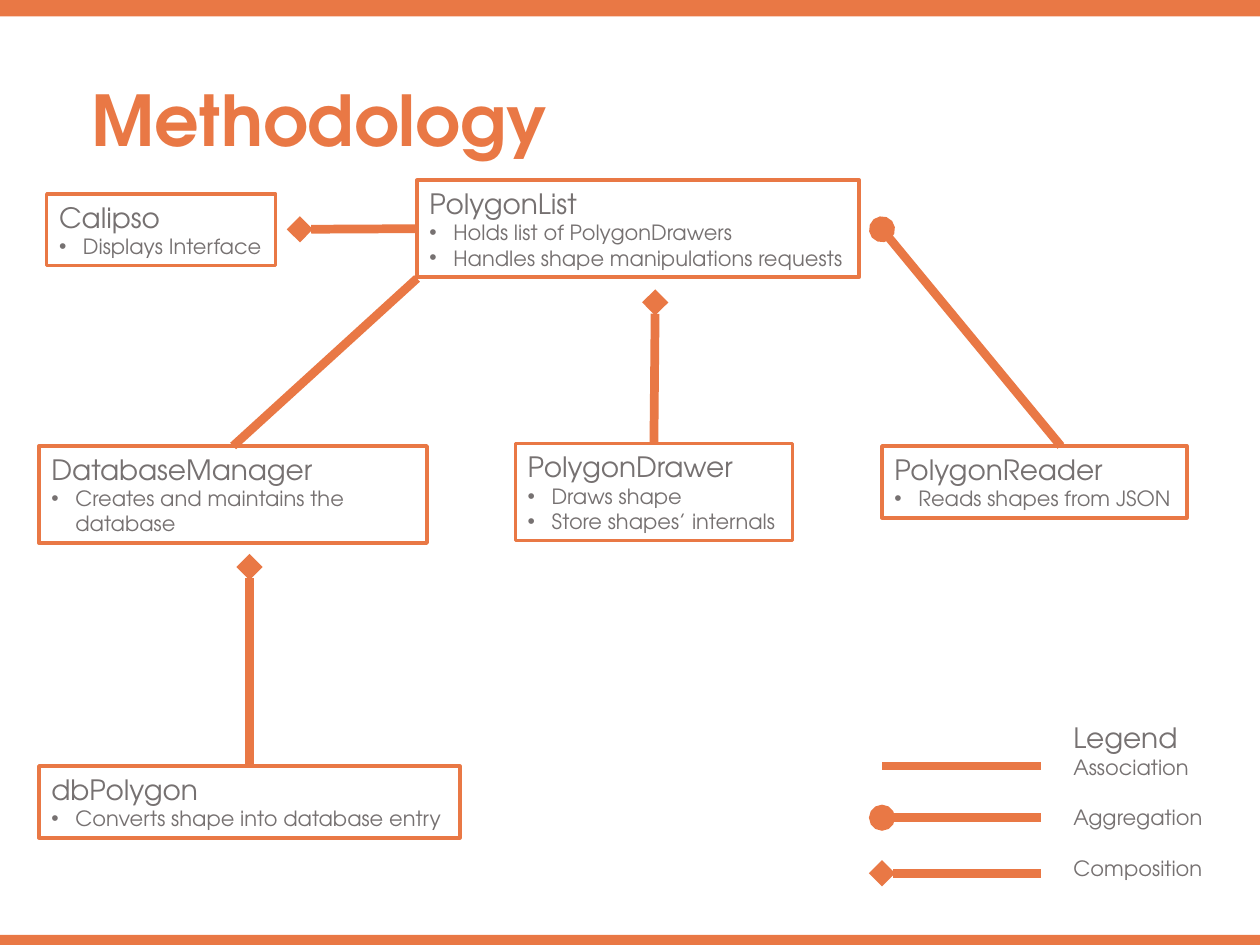
from lxml.etree import SubElement as Sub
from pptx import Presentation as Deck
from pptx.dml.color import RGBColor as Color
from pptx.enum.shapes import MSO_CONNECTOR as Link, MSO_SHAPE as Form
from pptx.enum.text import MSO_ANCHOR as Anchor, MSO_AUTO_SIZE as Auto, PP_ALIGN as Align
from pptx.oxml.ns import qn
from pptx.util import Inches, Pt

ORANGE = Color(0xE9, 0x78, 0x45)
GRAY = Color(0x76, 0x71, 0x71)
FONT = "TeX Gyre Adventor"
COLS, ROWS = 100, 75
TOP, LEFT = 0, 1


class Page:
    """Draws styled elements on one slide, placed by columns and rows of its grid."""

    def __init__(self, deck):
        self.cell = deck.slide_width / COLS
        self.slide = deck.slides.add_slide(deck.slide_layouts[5])
        self.shapes = self.slide.shapes

    def grid(self, *spots):
        return [round(spot * self.cell) for spot in spots]

    def style(self, para, size, color=GRAY, bold=False):
        for run in para.runs:
            font = run.font
            font.name, font.size, font.bold = FONT, Pt(size), bold
            font.color.rgb = color

    def title(self, text, *area):
        head = self.shapes.title
        head.left, head.top, head.width, head.height = self.grid(*area)
        frame = head.text_frame
        frame.text = text
        frame.vertical_anchor = Anchor.TOP
        para = frame.paragraphs[0]
        para.alignment = Align.LEFT
        para.line_spacing = 0.9
        self.style(para, 40, ORANGE, True)

    def bar(self, row, high):
        bar = self.shapes.add_shape(Form.RECTANGLE, *self.grid(0, row, COLS, high))
        bar.shadow.inherit = False
        bar.fill.solid()
        bar.fill.fore_color.rgb = ORANGE
        bar.line.fill.background()

    def text(self, name, items, area, wrap=False):
        box = self.shapes.add_textbox(*self.grid(*area))
        frame = box.text_frame
        frame.word_wrap = wrap
        frame.auto_size = Auto.SHAPE_TO_FIT_TEXT
        frame.text = name
        self.style(frame.paragraphs[0], 16)
        for item in items:
            para = frame.add_paragraph()
            para.text = item
            self.style(para, 12)
        return box

    def node(self, name, items, area, wrap=False, width=2):
        box = self.text(name, items, area, wrap)
        box.line.color.rgb = ORANGE
        box.line.width = Pt(width)
        for para in box.text_frame.paragraphs[1:]:
            props = para._p.get_or_add_pPr()
            props.set("marL", str(Inches(0.19)))
            props.set("indent", str(-Inches(0.19)))
            Sub(props, qn("a:buFont")).set("typeface", "Arial")
            Sub(props, qn("a:buChar")).set("char", "•")
        return box

    def legend(self, name, items, area):
        box = self.text(name, items, area)
        for para in box.text_frame.paragraphs[2:]:
            para.space_before = Pt(14.5)

    def line(self, start, stop, head=None, tail=None):
        line = self.shapes.add_connector(Link.STRAIGHT, *self.grid(*start, *stop))
        line.line.color.rgb = ORANGE
        line.line.width = Pt(5)
        props = line.element.spPr
        for tag, mark in (("a:headEnd", head), ("a:tailEnd", tail)):
            if mark:
                Sub(props.find(qn("a:ln")), qn(tag)).set("type", mark)
        Sub(props, qn("a:effectLst"))
        return line


def main():
    deck = Deck()
    deck.slide_width, deck.slide_height = Inches(10), Inches(7.5)
    page = Page(deck)
    page.bar(0, 1.3)
    page.bar(ROWS - 0.8, 0.8)
    page.title("Methodology", 6.3, 6.3, 87.3, 7.7)

    drawer = page.node("PolygonDrawer", ["Draws shape", "Store shapes’ internals"],
                       (40.9, 35.2, 22, 7.7))
    page.node("PolygonReader", ["Reads shapes from JSON"], (70, 35.4, 24.2, 5.7))
    entry = page.node("dbPolygon", ["Converts shape into database entry"],
                      (3.1, 60.8, 33.4, 5.7))
    page.node("Calipso", ["Displays Interface"], (3.7, 15.4, 18.2, 5.7), width=1.75)
    shapes = page.node("PolygonList", ["Holds list of PolygonDrawers",
                                       "Handles shape manipulations requests"],
                       (33.1, 14.3, 35.1, 7.7))
    base = page.node("DatabaseManager", ["Creates and maintains the database"],
                     (3.1, 35.4, 30.8, 7.7), wrap=True)

    page.line((51.9, 35.2), (52, 24), tail="diamond").begin_connect(drawer, TOP)
    page.line((23.8, 18.2), (33.1, 18.2), head="diamond").end_connect(shapes, LEFT)
    page.line((84.2, 35.4), (70, 18.2), tail="oval")
    page.line((33.1, 22.1), (18.5, 35.4)).end_connect(base, TOP)
    page.line((19.8, 60.8), (19.8, 45), tail="diamond").begin_connect(entry, TOP)

    page.legend("Legend", ["Association", "Aggregation", "Composition"],
                (84.2, 56.7, 12.5, 13.8))
    for row, mark in ((60.8, None), (64.9, "oval"), (69.3, "diamond")):
        page.line((70, row), (82.6, row), head=mark)
    deck.save("out.pptx")


if __name__ == "__main__":
    main()
